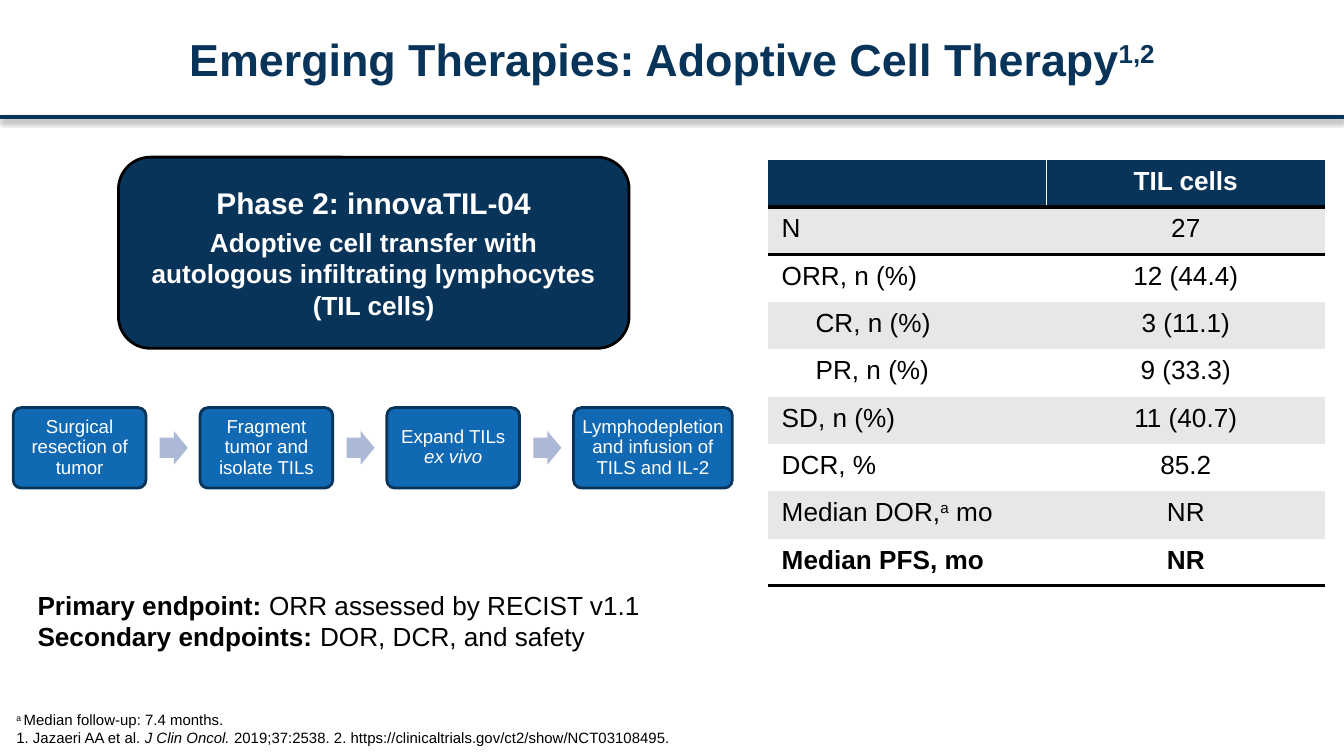
from dataclasses import dataclass

from lxml import etree
from pptx import Presentation
from pptx.dml.color import RGBColor
from pptx.enum.shapes import MSO_CONNECTOR, MSO_SHAPE
from pptx.enum.text import MSO_ANCHOR, MSO_AUTO_SIZE, PP_ALIGN
from pptx.oxml.ns import qn
from pptx.util import Cm, Pt

STRAIGHT = MSO_CONNECTOR.STRAIGHT
ROUNDED, ARROW, RECTANGLE = (
    MSO_SHAPE.ROUNDED_RECTANGLE, MSO_SHAPE.RIGHT_ARROW, MSO_SHAPE.RECTANGLE)
LEFT, CENTER = PP_ALIGN.LEFT, PP_ALIGN.CENTER
TOP, MIDDLE, BOTTOM = MSO_ANCHOR.TOP, MSO_ANCHOR.MIDDLE, MSO_ANCHOR.BOTTOM
TITLE_ONLY = 5
NO_TABLE_STYLE = "{2D5ABB26-0587-4C30-8999-92F81FD0307C}"


@dataclass(frozen=True)
class Theme:
    font: str = "Arial"
    navy: str = "09345A"
    blue: str = "1168B3"
    arrow: str = "ABB9D6"
    band: str = "E7E7E7"
    white: str = "FFFFFF"
    black: str = "000000"
    title: int = 24
    heading: int = 16
    body: int = 14
    step: int = 10
    note: int = 8


THEME = Theme()

STEPS = [
    [("Surgical resection of tumor", "")],
    [("Fragment tumor and isolate TILs", "")],
    [("Expand TILs ", ""), ("ex vivo", "i")],
    [("Lymphodepletion and infusion of TILS and IL-2", "")],
]

# Label spans, value, indented
RESULTS = [
    ([], "TIL cells", False),
    ([("N", "")], "27", False),
    ([("ORR, n (%)", "")], "12 (44.4)", False),
    ([("CR, n (%)", "")], "3 (11.1)", True),
    ([("PR, n (%)", "")], "9 (33.3)", True),
    ([("SD, n (%)", "")], "11 (40.7)", False),
    ([("DCR, %", "")], "85.2", False),
    ([("Median DOR,", ""), ("a", "^"), (" mo", "")], "NR", False),
    ([("Median PFS, mo", "")], "NR", False),
]


def color(value):
    return RGBColor.from_string(value)


def write(para, spans, size, ink, align=LEFT, bold=None):
    """Fill a paragraph; span marks are b (bold), i (italic), ^ (superscript)."""
    para.alignment = align
    font = para.font
    font.name, font.size, font.bold = THEME.font, Pt(size), bold
    font.color.rgb = color(ink)
    for text, marks in spans:
        span = para.add_run()
        span.text = text
        if "b" in marks:
            span.font.bold = True
        if "i" in marks:
            span.font.italic = True
        if "^" in marks:
            span.font._element.set("baseline", "30000")


def set_frame(frame, anchor, margins=(0.25, 0.13, 0.25, 0.13)):
    frame.word_wrap = True
    frame.auto_size = MSO_AUTO_SIZE.NONE
    frame.vertical_anchor = anchor
    (frame.margin_left, frame.margin_top,
     frame.margin_right, frame.margin_bottom) = map(Cm, margins)


def add_box(page, kind, place, fill, line=None):
    box = page.shapes.add_shape(kind, *map(Cm, place))
    box.shadow.inherit = False
    box.fill.solid()
    box.fill.fore_color.rgb = color(fill)
    if line:
        box.line.color.rgb = color(line)
        box.line.width = Pt(1.5)
    else:
        box.line.fill.background()
    return box


def add_title(page):
    title = page.shapes.title
    title.left, title.top, title.width, title.height = map(Cm, (0.25, 0.08, 24.9, 2.06))
    set_frame(title.text_frame, MIDDLE)
    write(title.text_frame.paragraphs[0],
          [("Emerging Therapies: Adoptive Cell Therapy", ""), ("1,2", "^")],
          THEME.title, THEME.navy, CENTER, True)


def add_title_rule(page):
    rule = page.shapes.add_connector(STRAIGHT, 0, Cm(2.21), Cm(25.4), Cm(2.21))
    rule.line.color.rgb = color(THEME.navy)
    rule.line.width = Pt(2)
    effects = etree.SubElement(rule._element.spPr, qn("a:effectLst"))
    shadow = etree.SubElement(effects, qn("a:outerShdw"), blurRad=str(Pt(3.1)),
                              dist=str(Pt(1.6)), dir="5400000", rotWithShape="0")
    tint = etree.SubElement(shadow, qn("a:srgbClr"), val=THEME.black)
    etree.SubElement(tint, qn("a:alpha"), val="38000")


def add_study(page):
    box = add_box(page, ROUNDED, (2.24, 2.97, 9.65, 3.61), THEME.navy, THEME.black)
    frame = box.text_frame
    set_frame(frame, MIDDLE)
    write(frame.paragraphs[0], [("Phase 2: innovaTIL-04", "")],
          THEME.heading, THEME.white, CENTER, True)
    para = frame.add_paragraph()
    para.space_before = Pt(3)
    write(para, [("Adoptive cell transfer with autologous infiltrating lymphocytes (TIL cells)", "")],
          THEME.body, THEME.white, CENTER, True)


def add_process(page):
    left, pitch, width, last_width = 0.25, 3.53, 2.51, 3.0
    last = len(STEPS) - 1
    for index, spans in enumerate(STEPS):
        x = left + index * pitch
        place = (x, 7.7, last_width if index == last else width, 1.52)
        box = add_box(page, ROUNDED, place, THEME.blue, THEME.navy)
        box.adjustments[0] = 0.1
        set_frame(box.text_frame, MIDDLE, (0.1, 0.1, 0.1, 0.1))
        para = box.text_frame.paragraphs[0]
        para.line_spacing = 0.9
        write(para, spans, THEME.step, THEME.white, CENTER)
        if index < last:
            arrow = add_box(page, ARROW, (x + 2.77, 8.14, 0.53, 0.64), THEME.arrow)
            arrow.adjustments[0] = 0.6


def add_border(cell, side, ink, points):
    line = etree.SubElement(cell._tc.get_or_add_tcPr(), qn("a:" + side), w=str(Pt(points)))
    fill = etree.SubElement(line, qn("a:solidFill"))
    etree.SubElement(fill, qn("a:srgbClr"), val=ink)


def add_results(page):
    count = len(RESULTS)
    last = count - 1
    rules = {0: 2.25, 1: 2.25, last: 2}
    table = page.shapes.add_table(
        count, 2, Cm(14.52), Cm(3.02), Cm(10.52), Cm(8.05)).table
    table.first_row = table.horz_banding = False
    table._tbl.tblPr.find(qn("a:tableStyleId")).text = NO_TABLE_STYLE
    for row, (label, value, indented) in enumerate(RESULTS):
        header = row == 0
        fill = THEME.navy if header else THEME.band if row % 2 else THEME.white
        ink = THEME.white if header else THEME.black
        for column, spans in enumerate((label, [(value, "")])):
            cell = table.cell(row, column)
            # Borders come before the fill in the cell properties
            if header and column == 0:
                add_border(cell, "lnR", THEME.white, 1)
            if row in rules:
                add_border(cell, "lnB", THEME.black, rules[row])
            cell.fill.solid()
            cell.fill.fore_color.rgb = color(fill)
            cell.vertical_anchor = TOP
            para = cell.text_frame.paragraphs[0]
            write(para, spans, THEME.body, ink, CENTER if column else LEFT,
                  row in (0, last))
            if indented and column == 0:
                para._p.get_or_add_pPr().set("marL", str(Cm(0.64)))


def add_endpoints(page):
    box = add_box(page, RECTANGLE, (0.46, 11, 12.37, 1.45), THEME.white, THEME.white)
    frame = box.text_frame
    set_frame(frame, MIDDLE)
    write(frame.paragraphs[0],
          [("Primary endpoint: ", "b"), ("ORR assessed by RECIST v1.1", "")],
          THEME.body, THEME.black)
    write(frame.add_paragraph(),
          [("Secondary endpoints: ", "b"), ("DOR, DCR, and safety", "")],
          THEME.body, THEME.black)


def add_footnotes(page):
    box = page.shapes.add_textbox(Cm(0.18), Cm(13.41), Cm(21.59), Cm(0.69))
    frame = box.text_frame
    set_frame(frame, BOTTOM, (0.13, 0.13, 0.25, 0))
    write(frame.paragraphs[0], [("a ", "^"), ("Median follow-up: 7.4 months.", "")],
          THEME.note, THEME.black)
    write(frame.add_paragraph(),
          [("1. Jazaeri AA et al. ", ""), ("J Clin Oncol.", "i"),
           (" 2019;37:2538. 2. https://clinicaltrials.gov/ct2/show/NCT03108495.", "")],
          THEME.note, THEME.black)


def main():
    deck = Presentation()
    deck.slide_width, deck.slide_height = Cm(25.4), Cm(14.28)
    page = deck.slides.add_slide(deck.slide_layouts[TITLE_ONLY])
    # Header
    add_title_rule(page)
    add_title(page)
    # Study design on the left, results on the right
    add_study(page)
    add_process(page)
    add_results(page)
    # Endpoints and sources
    add_endpoints(page)
    add_footnotes(page)
    deck.save("out.pptx")


if __name__ == "__main__":
    main()
